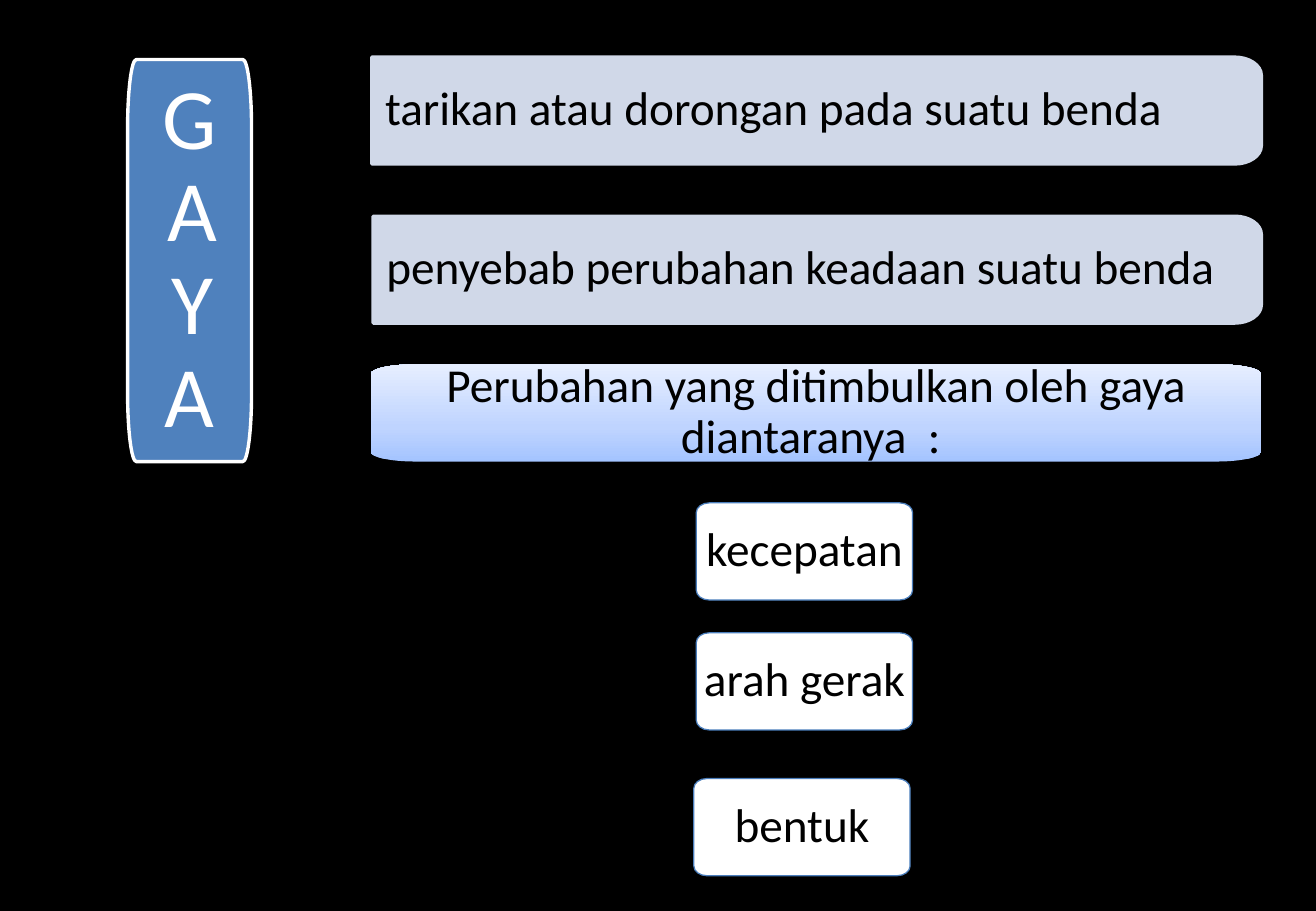
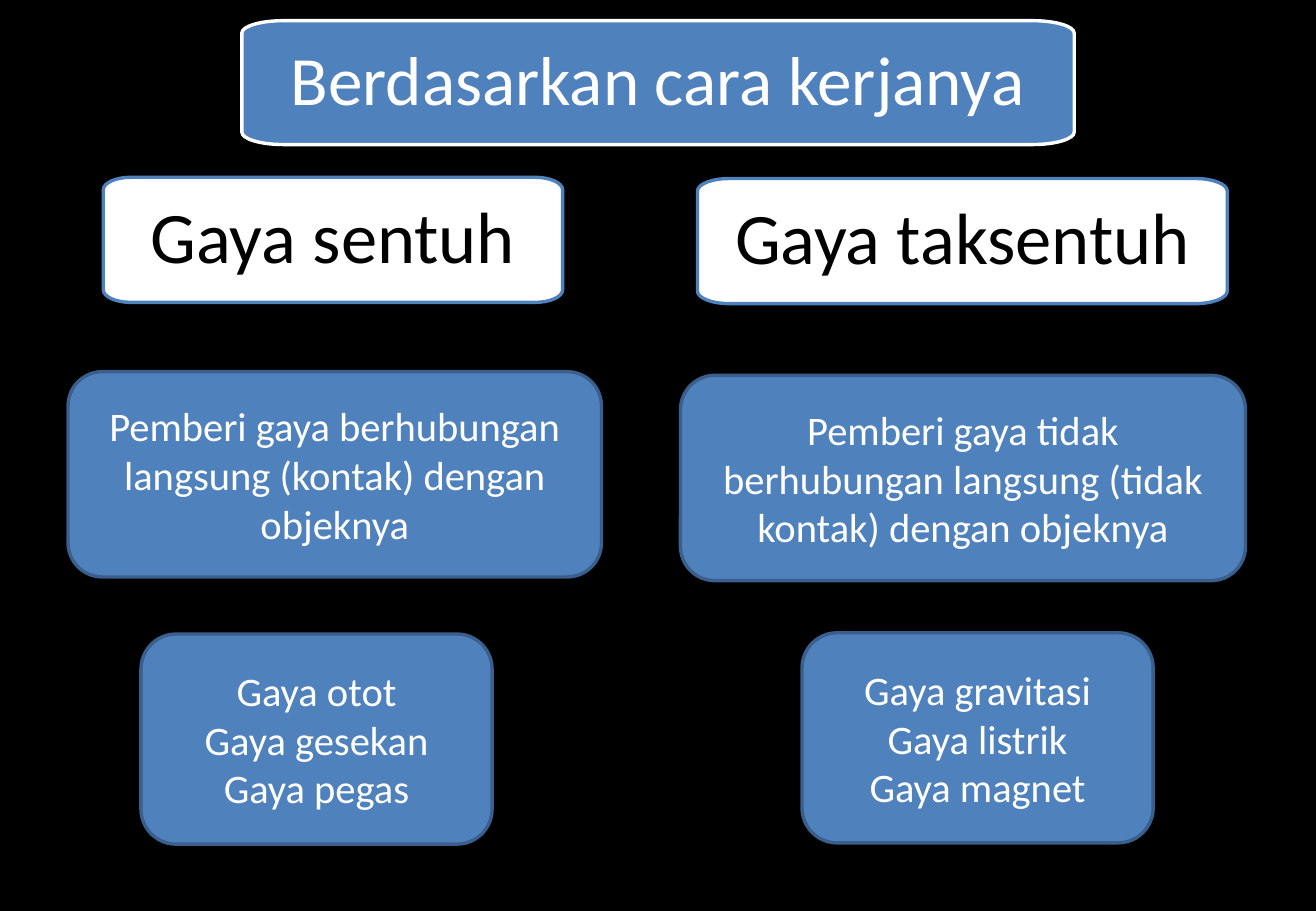
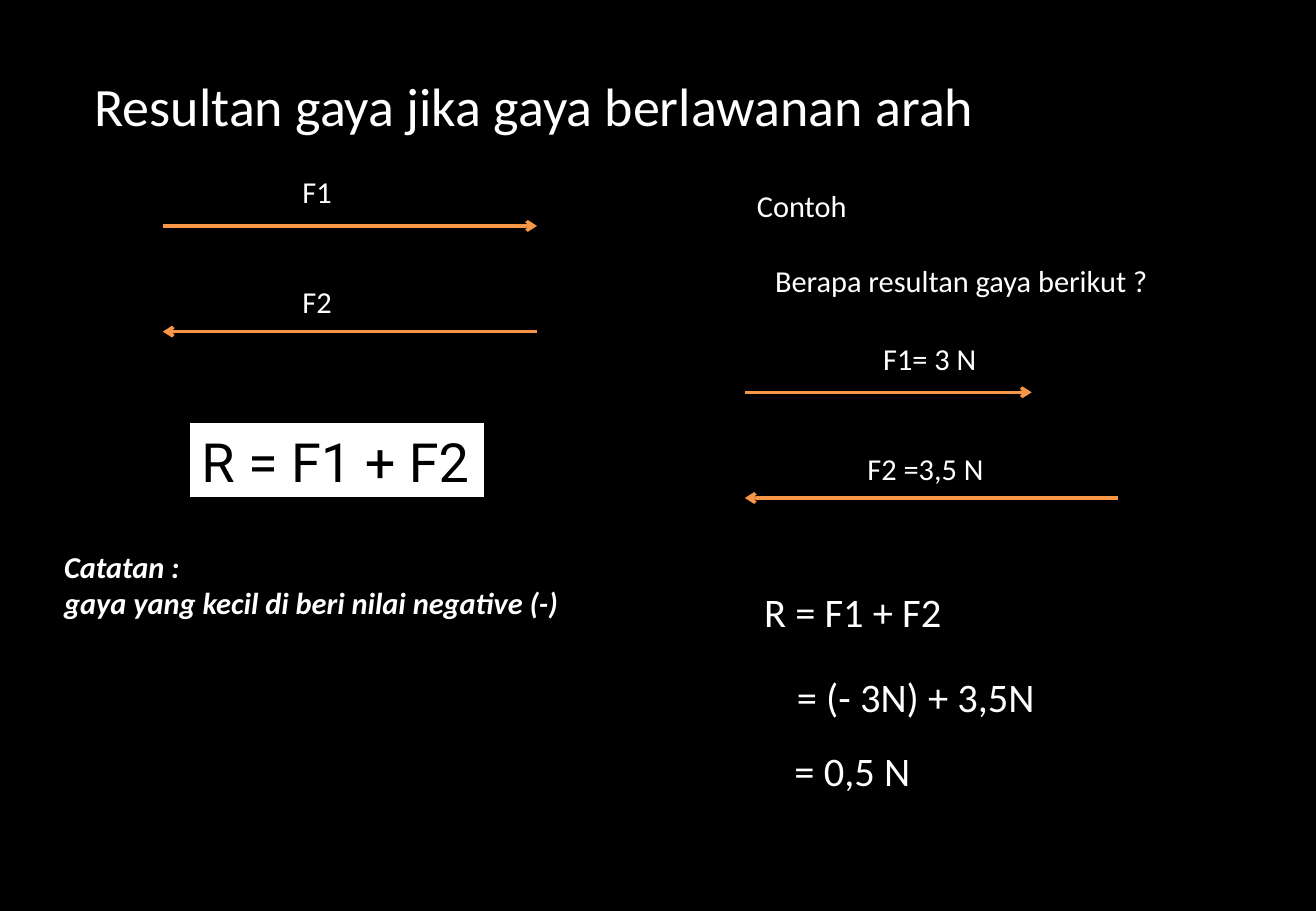
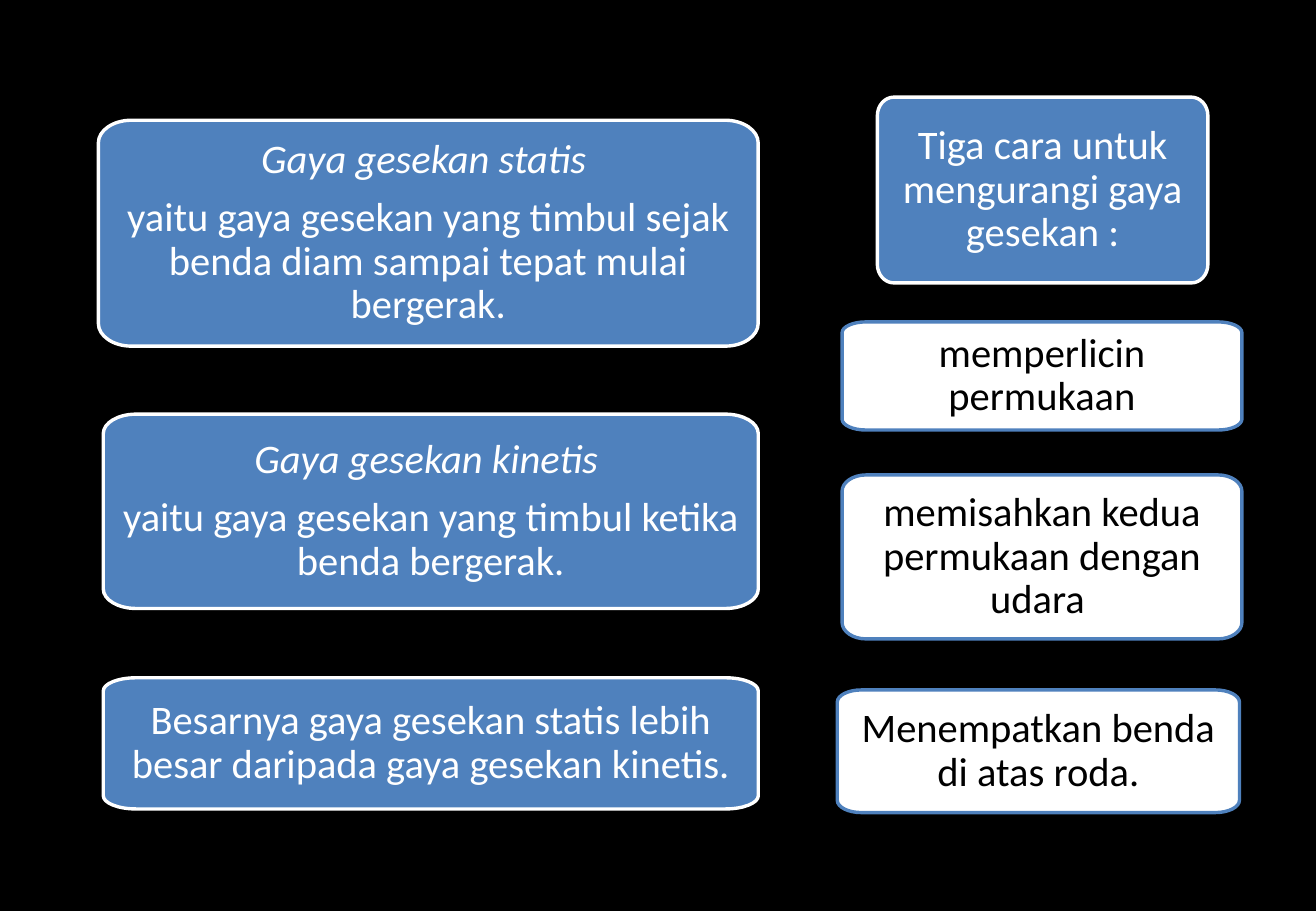
from copy import deepcopy

from lxml import etree
from pptx import Presentation
from pptx.dml.color import RGBColor
from pptx.enum.shapes import MSO_CONNECTOR, MSO_SHAPE
from pptx.enum.text import MSO_ANCHOR, PP_ALIGN
from pptx.oxml.ns import qn
from pptx.util import Inches, Pt

COLORS = {
    "black": "000000", "white": "FFFFFF", "blue": "4F81BD",
    "thin_edge": "4B7EBC", "dark_edge": "3A5F8C", "pale": "D0D8E8",
    "arrow": "F79646", "sky_low": "A4C4FF", "sky_mid": "BFD4FF", "sky_high": "E6EEFF",
}
RGB = {name: RGBColor.from_string(code) for name, code in COLORS.items()}
FONT = "Calibri"
CURVE = 0.55  # control point distance that makes a quarter ellipse

# Card styles: fill, edge, edge width, text colour, corner as share of width and height
STYLES = {
    "blue": ("blue", "white", 2, "white", 0.05, 0.1),
    "tall": ("blue", "white", 2, "white", 0.07, 0.17),
    "white": ("white", "blue", 2, "black", 0.06, 0.1),
    "thin": ("white", "thin_edge", 0.75, "black", 0.06, 0.1),
    "bar": ("pale", "pale", 2, "black", 0.03, 0.17),
    "sky": ("sky_mid", None, 0, "black", 0.05, 0.1),
}


def write(shape, text, size, color, align=PP_ALIGN.LEFT, anchor=MSO_ANCHOR.TOP,
          inset=(0.1, 0.05), spacing=1, after=0, font=FONT):
    frame = shape.text_frame
    frame.text = text
    frame.word_wrap = True
    frame.vertical_anchor = anchor
    frame.margin_left = frame.margin_right = Inches(inset[0])
    frame.margin_top = frame.margin_bottom = Inches(inset[1])
    for paragraph in frame.paragraphs:
        paragraph.alignment = align
        paragraph.line_spacing = spacing
        paragraph.space_after = Pt(round(size * after, 1))
        for run in paragraph.runs:
            run.font.name = font
            run.font.size = Pt(size)
            run.font.color.rgb = RGB[color]


def card(slide, box, text, size, style, inset=(0.05, 0.04)):
    fill, edge, edge_width, ink, share_x, share_y = STYLES[style]
    left, top, width, height = map(Inches, box)
    right, bottom = left + width, top + height
    rx, ry = int(width * share_x), int(height * share_y)
    is_bar = style == "bar"

    # Outline points, each with the corner it bends around; bars are square on the left
    outline = [
        ((right, top + ry), None),
        ((right, bottom - ry), None),
        ((right - rx, bottom), (right, bottom)),
    ]
    if is_bar:
        outline += [((left, bottom), None), ((left, top), None)]
    else:
        outline += [
            ((left + rx, bottom), None),
            ((left, bottom - ry), (left, bottom)),
            ((left, top + ry), None),
            ((left + rx, top), (left, top)),
        ]
    outline += [((right - rx, top), None), ((right, top + ry), (right, top))]

    builder = slide.shapes.build_freeform(*outline[0][0])
    builder.add_line_segments([point for point, _ in outline[1:]], close=True)
    shape = builder.convert_to_shape()

    # Turn the corner segments into curves
    segments = list(shape._element.iter(qn("a:lnTo")))
    for segment, (start, _), (end, corner) in zip(segments, outline, outline[1:]):
        if corner:
            segment.tag = qn("a:cubicBezTo")
            for position, origin in enumerate((start, end)):
                x, y = (int(a + CURVE * (c - a)) for a, c in zip(origin, corner))
                control = etree.Element(qn("a:pt"), x=str(x - left), y=str(y - top))
                segment.insert(position, control)

    shape.shadow.inherit = False
    shape.fill.solid()
    shape.fill.fore_color.rgb = RGB[fill]
    if edge:
        shape.line.color.rgb = RGB[edge]
        shape.line.width = Pt(edge_width)
    else:
        shape.line.fill.background()
    write(shape, text, size, ink, PP_ALIGN.LEFT if is_bar else PP_ALIGN.CENTER,
          MSO_ANCHOR.MIDDLE, inset, 0.9, 0.15 if is_bar else 0.35)
    return shape


prs = Presentation()
prs.slide_width, prs.slide_height = Inches(10.83), Inches(7.5)
prs.slide_master.background.fill.solid()
prs.slide_master.background.fill.fore_color.rgb = RGB["black"]
definition, kinds, resultant, friction = [
    prs.slides.add_slide(prs.slide_layouts[6]) for _ in range(4)
]

# Slide 1: what a force is
card(definition, (1.05, 0.49, 1.02, 3.31), "GAYA", 51, "tall", (0.27, 0.16))
for box, meaning in (
    ((3.06, 0.47, 7.32, 0.88), "tarikan atau dorongan pada suatu benda"),
    ((3.07, 1.78, 7.31, 0.88), "penyebab perubahan keadaan suatu benda"),
):
    card(definition, box, meaning, 28, "bar", (0.11, 0.1))

changes = card(definition, (3.05, 3, 7.33, 0.8),
               "Perubahan yang ditimbulkan oleh gaya diantaranya  : ", 28, "sky", (0.04, 0.04))
changes.fill.gradient()
changes.fill.gradient_angle = 90
first_stop = changes._element.spPr.find(".//" + qn("a:gs"))
first_stop.addnext(deepcopy(first_stop))
for stop, (position, color) in zip(
    changes.fill.gradient_stops, ((0, "sky_low"), (0.35, "sky_mid"), (1, "sky_high"))
):
    stop.position = position
    stop.color.rgb = RGB[color]

for left, top, change in (
    (5.73, 4.14, "kecepatan"), (5.73, 5.21, "arah gerak"), (5.71, 6.41, "bentuk"),
):
    card(definition, (left, top, 1.78, 0.8), change, 28, "thin")

# Slide 2: contact and non-contact forces
for box, heading, size, style in (
    ((1.99, 0.17, 6.85, 1.02), "Berdasarkan cara kerjanya", 41, "blue"),
    ((0.85, 1.46, 3.78, 1.03), "Gaya sentuh", 43, "white"),
    ((5.74, 1.47, 4.36, 1.03), "Gaya taksentuh", 43, "white"),
):
    card(kinds, box, heading, size, style, (0.13, 0.11))

for box, detail in (
    ((0.56, 3.06, 4.39, 1.69), "Pemberi gaya berhubungan langsung (kontak) dengan objeknya"),
    ((5.6, 3.09, 4.65, 1.69),
     "Pemberi gaya tidak berhubungan langsung (tidak kontak) dengan objeknya"),
    ((1.16, 5.22, 2.89, 1.73), "Gaya otot\nGaya gesekan\nGaya pegas"),
    ((6.6, 5.21, 2.89, 1.73), "Gaya gravitasi\nGaya listrik\nGaya magnet"),
):
    panel = kinds.shapes.add_shape(MSO_SHAPE.ROUNDED_RECTANGLE, *map(Inches, box))
    panel.shadow.inherit = False
    panel.fill.solid()
    panel.fill.fore_color.rgb = RGB["blue"]
    panel.line.color.rgb = RGB["dark_edge"]
    panel.line.width = Pt(2)
    write(panel, detail, 24, "white", PP_ALIGN.CENTER, MSO_ANCHOR.MIDDLE)

# Slide 3: resultant of opposite forces
for start, end, y in (
    (1.34, 4.42, 1.86), (4.42, 1.34, 2.73), (6.13, 8.49, 3.23), (9.2, 6.13, 4.1),
):
    force = resultant.shapes.add_connector(
        MSO_CONNECTOR.STRAIGHT, Inches(start), Inches(y), Inches(end), Inches(y))
    force.line.color.rgb = RGB["arrow"]
    force.line.width = Pt(2)
    etree.SubElement(force._element.spPr.find(qn("a:ln")), qn("a:tailEnd"), type="arrow")
    etree.SubElement(force._element.spPr, qn("a:effectLst"))

for box, text, size in (
    ((0.68, 0.55, 7.52, 0.64), "Resultan gaya jika gaya berlawanan arah", 32),
    ((2.39, 1.38, 0.51, 0.4), "F1", 18),
    ((2.39, 2.28, 0.51, 0.4), "F2", 18),
    ((6.13, 1.49, 1.01, 0.4), "Contoh", 18),
    ((6.28, 2.11, 3.3, 0.4), "Berapa resultan gaya berikut ?", 18),
    ((7.17, 2.75, 1.16, 0.4), "F1= 3 N", 18),
    ((7.04, 3.66, 1.25, 0.4), "F2 =3,5 N", 18),
    ((6.19, 4.78, 1.89, 0.5), "R = F1 + F2", 24),
    ((6.46, 5.48, 2.18, 0.5), "= (- 3N) + 3,5N", 24),
    ((6.44, 6.09, 1.16, 0.5), "= 0,5 N", 24),
):
    write(resultant.shapes.add_textbox(*map(Inches, box)), text, size, "white")

note = resultant.shapes.add_textbox(Inches(0.43), Inches(4.46), Inches(4.31), Inches(0.71))
write(note, "Catatan :\ngaya yang kecil di beri nilai negative (-)", 18, "white")
for paragraph in note.text_frame.paragraphs:
    for run in paragraph.runs:
        run.font.bold = run.font.italic = True

formula = resultant.shapes.add_shape(
    MSO_SHAPE.RECTANGLE, Inches(1.56), Inches(3.48), Inches(2.43), Inches(0.62))
formula.shadow.inherit = False
formula.fill.solid()
formula.fill.fore_color.rgb = RGB["white"]
formula.line.color.rgb = RGB["black"]
formula.line.width = Pt(0.75)
write(formula, "R = F1 + F2", 32, "black", font="Roboto")

# Slide 4: friction, its two kinds and how to reduce it
for box, text in (
    ((0.81, 0.99, 5.43, 1.86),
     "Gaya gesekan statis \n"
     "yaitu gaya gesekan yang timbul sejak benda diam sampai tepat mulai bergerak."),
    ((0.85, 3.41, 5.39, 1.6),
     "Gaya gesekan kinetis \nyaitu gaya gesekan yang timbul ketika benda bergerak."),
):
    kind = card(friction, box, text, 24, "blue")
    kind.text_frame.paragraphs[0].runs[0].font.italic = True

for box, text, style in (
    ((0.85, 5.58, 5.39, 1.08),
     "Besarnya gaya gesekan statis lebih besar daripada gaya gesekan kinetis.", "blue"),
    ((7.22, 0.8, 2.72, 1.53), "Tiga cara untuk mengurangi gaya gesekan :", "blue"),
    ((6.93, 2.65, 3.29, 0.89), "memperlicin permukaan", "white"),
    ((6.93, 3.91, 3.29, 1.35), "memisahkan kedua permukaan dengan udara ", "white"),
    ((6.89, 5.68, 3.31, 1.01), "Menempatkan benda di atas roda.", "white"),
):
    card(friction, box, text, 24, style)

prs.save("out.pptx")
